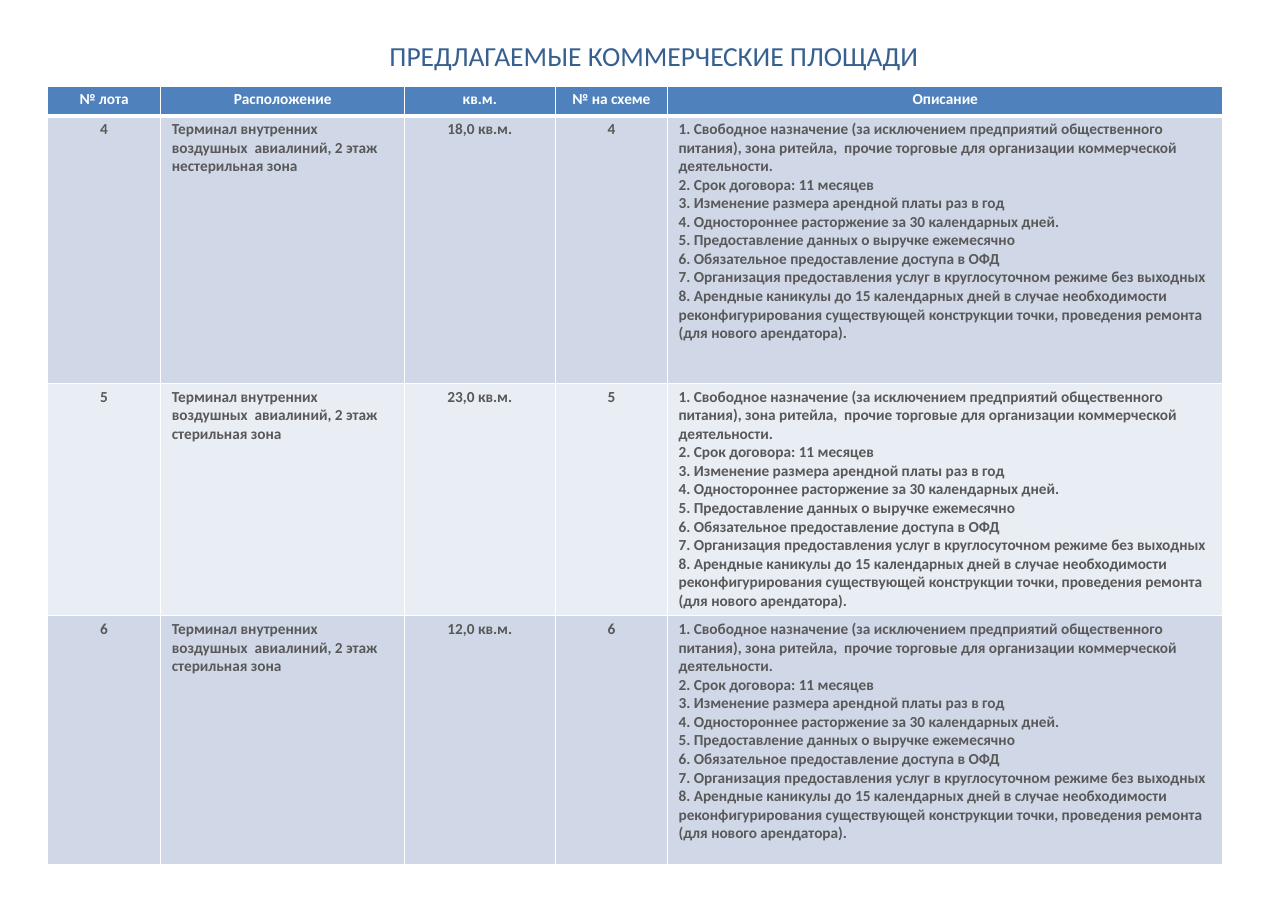
from dataclasses import dataclass

from lxml import etree
from pptx import Presentation
from pptx.dml.color import RGBColor
from pptx.enum import text
from pptx.oxml import ns
from pptx.util import Inches, Pt


@dataclass(frozen=True)
class Theme:
    font: str = "Calibri"
    title: str = "376092"
    head: str = "4F81BD"
    ink: str = "595959"
    white: str = "FFFFFF"
    bands: tuple = ("D0D8E8", "E9EDF4")
    large: int = 18
    small: int = 10
    thin: int = 1
    thick: int = 3


THEME = Theme()
CENTER, LEFT = text.PP_ALIGN.CENTER, text.PP_ALIGN.LEFT

WIDTHS = (1.03, 2.21, 1.37, 1.02, 5.04)
HEIGHTS = (0.27, 2.43, 2.11, 2.26)
ALIGNS = (CENTER, LEFT, CENTER, CENTER, LEFT)
HEADS = ("№ лота", "Расположение", "кв.м.", "№ на схеме", "Описание")
PLACE = "Терминал внутренних воздушных  авиалиний, 2 этаж"
LOTS = (
    ("4", "нестерильная зона", "18,0 кв.м."),
    ("5", "стерильная зона", "23,0 кв.м."),
    ("6", "стерильная зона", "12,0 кв.м."),
)
TERMS = "\n".join((
    "1. Свободное назначение (за исключением предприятий общественного питания), "
    "зона ритейла,  прочие торговые для организации коммерческой деятельности.",
    "2. Срок договора: 11 месяцев",
    "3. Изменение размера арендной платы раз в год",
    "4. Одностороннее расторжение за 30 календарных дней.",
    "5. Предоставление данных о выручке ежемесячно",
    "6. Обязательное предоставление доступа в ОФД",
    "7. Организация предоставления услуг в круглосуточном режиме без выходных",
    "8. Арендные каникулы до 15 календарных дней в случае необходимости "
    "реконфигурирования существующей конструкции точки, проведения ремонта "
    "(для нового арендатора).",
))


def write(frame, words, size, color, align, bold=False):
    frame.text = words
    for para in frame.paragraphs:
        para.alignment = align
        for run in para.runs:
            run.font.name = THEME.font
            run.font.size = Pt(size)
            run.font.bold = bold
            run.font.color.rgb = RGBColor.from_string(color)


def border(cell, top, bottom):
    props = cell._tc.get_or_add_tcPr()
    sides = (("L", THEME.thin), ("R", THEME.thin), ("T", top), ("B", bottom))
    for side, width in sides:
        line = etree.SubElement(props, ns.qn(f"a:ln{side}"), w=str(Pt(width)))
        fill = etree.SubElement(line, ns.qn("a:solidFill"))
        etree.SubElement(fill, ns.qn("a:srgbClr"), val=THEME.white)


def style(cell, fill, top, bottom):
    border(cell, top, bottom)
    cell.fill.solid()
    cell.fill.fore_color.rgb = RGBColor.from_string(fill)
    cell.margin_left = cell.margin_right = Inches(0.1)
    cell.margin_top = cell.margin_bottom = Inches(0.04)


def add_title(slide):
    title = slide.shapes.title
    title.left, title.top = Inches(0.6), Inches(0.3)
    title.width, title.height = Inches(10.67), Inches(0.4)
    frame = title.text_frame
    frame.word_wrap = True
    frame.vertical_anchor = text.MSO_ANCHOR.MIDDLE
    write(frame, "ПРЕДЛАГАЕМЫЕ КОММЕРЧЕСКИЕ ПЛОЩАДИ",
          THEME.large, THEME.title, CENTER)


def add_lots(slide):
    rows = [HEADS] + [(lot, f"{PLACE}\n{zone}", area, lot, TERMS)
                      for lot, zone, area in LOTS]
    table = slide.shapes.add_table(
        len(rows), len(HEADS), Inches(0.43), Inches(0.78),
        Inches(sum(WIDTHS)), Inches(sum(HEIGHTS))).table
    for column, width in zip(table.columns, WIDTHS):
        column.width = Inches(width)
    for r, (row, height) in enumerate(zip(rows, HEIGHTS)):
        table.rows[r].height = Inches(height)
        head = r == 0
        fill = THEME.head if head else THEME.bands[(r - 1) % 2]
        color = THEME.white if head else THEME.ink
        top = THEME.thick if r == 1 else THEME.thin
        bottom = THEME.thick if head else THEME.thin
        for c, words in enumerate(row):
            cell = table.cell(r, c)
            style(cell, fill, top, bottom)
            align = CENTER if head else ALIGNS[c]
            write(cell.text_frame, words, THEME.small, color, align, True)


def main():
    deck = Presentation()
    deck.slide_width, deck.slide_height = Inches(11.69), Inches(8.27)
    slide = deck.slides.add_slide(deck.slide_layouts[5])
    add_title(slide)
    add_lots(slide)
    deck.save("out.pptx")


if __name__ == "__main__":
    main()
